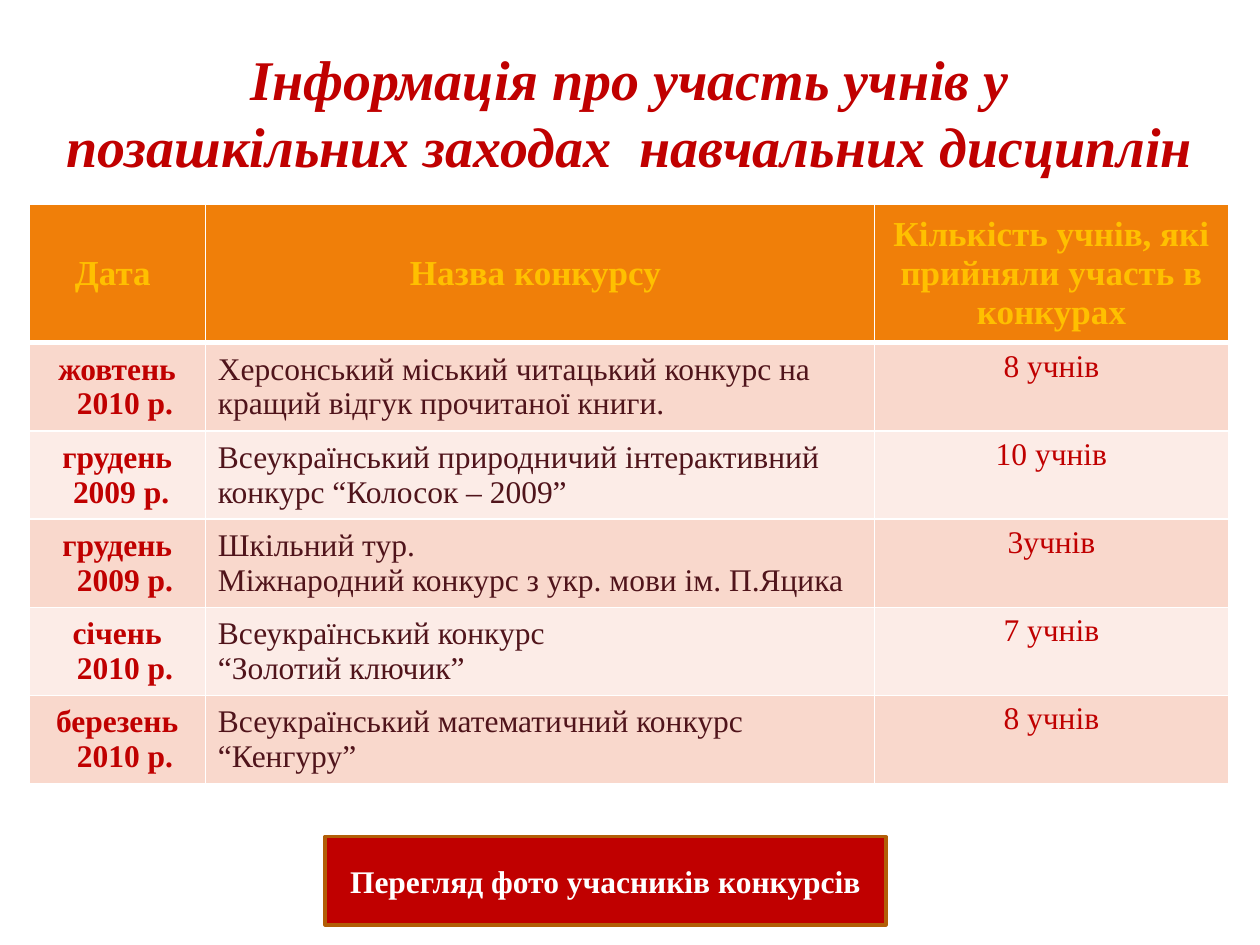
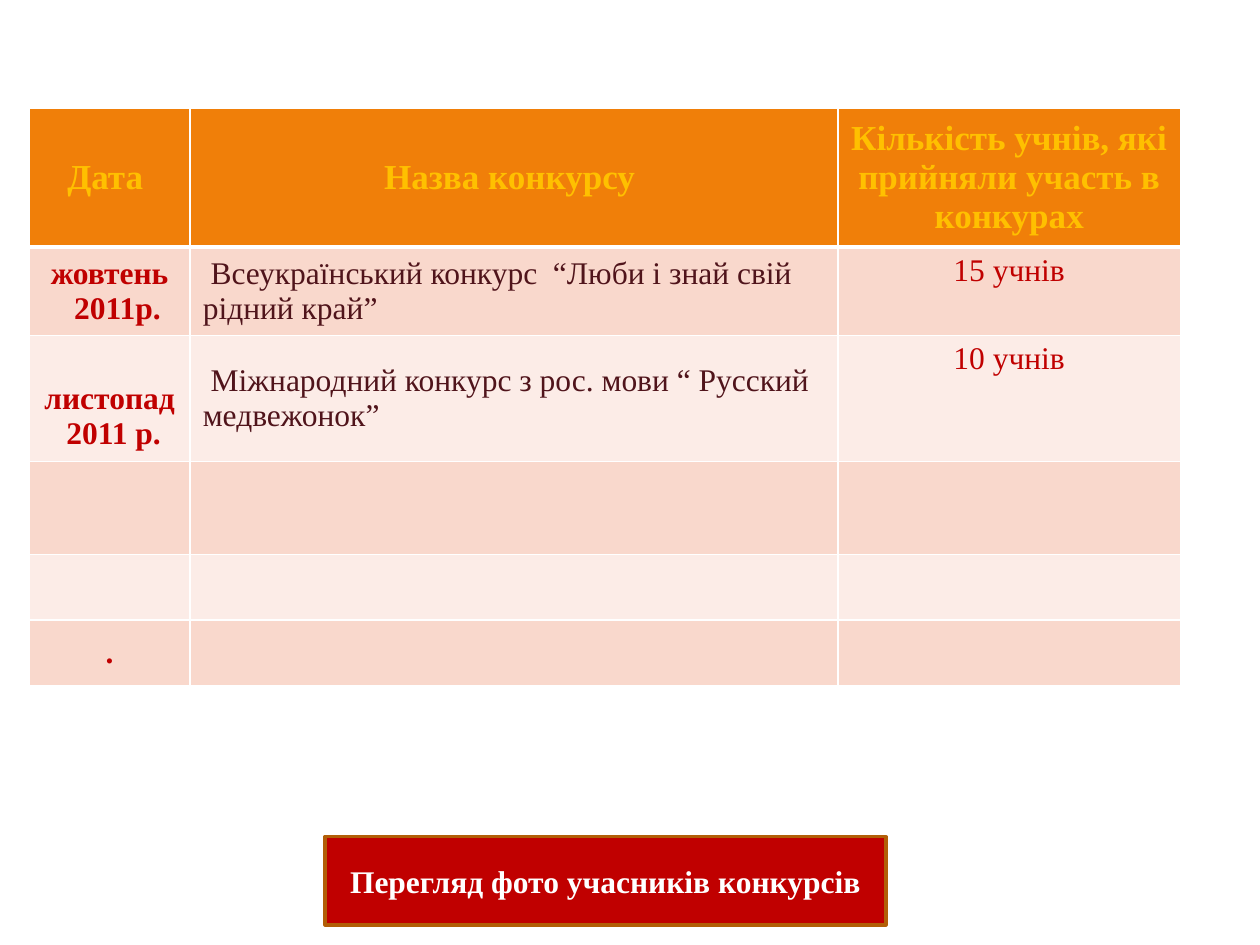
from dataclasses import dataclass

from lxml import etree
from pptx import Presentation, util as u
from pptx.dml.color import RGBColor
from pptx.enum import shapes, text
from pptx.oxml.ns import qn

UNIT = u.Inches(0.1)  # the slide is a grid of 100 columns and 75 rows
COLS, ROWS = 100, 75
MID, LEFT = text.PP_ALIGN.CENTER, text.PP_ALIGN.LEFT


@dataclass(frozen=True)
class Theme:
    font: str = "Times New Roman"
    red: str = "C00000"
    white: str = "FFFFFF"
    orange: str = "F07F09"
    gold: str = "FFC000"
    brown: str = "50141B"
    edge: str = "B25E07"
    bands: tuple[str, str] = ("F9D8CC", "FCECE7")
    title: float = 32
    head: float = 20
    body: float = 18
    thin: float = 1
    thick: float = 3


@dataclass(frozen=True)
class Box:
    x: float
    y: float
    w: float
    h: float

    def place(self) -> list[int]:
        return [grid(n) for n in (self.x, self.y, self.w, self.h)]


@dataclass(frozen=True)
class Style:
    size: float
    color: str
    bold: bool = False
    italic: bool = False
    align: text.PP_ALIGN = MID


@dataclass(frozen=True)
class Entry:
    date: str = ""
    name: str = ""
    count: str = ""
    high: float = 7
    drop: float = 0.5  # top margin of the date


@dataclass(frozen=True)
class Page:
    top: float
    widths: tuple[float, ...]
    entries: list[Entry]
    title: str = ""


T = Theme()
TITLE = Style(T.title, T.red, bold=True, italic=True)
HEAD = Style(T.head, T.gold, bold=True)
DATE = Style(T.body, T.red, bold=True)
NAME = Style(T.body, T.brown, align=LEFT)
COUNT = Style(T.body, T.red)
LABEL = Style(T.body, T.white, bold=True)

TITLE_BOX = Box(3.1, 4.7, 93.8, 10)
BUTTON_BOX = Box(25.8, 66.4, 44.5, 7)
BUTTON = "Перегляд фото учасників конкурсів"
TABLE_X, HEAD_H = 2.3, 11
HEADS = ("Дата ", "Назва конкурсу ",
         "Кількість учнів, які прийняли участь в конкурах")

PAGES = [
    Page(16.2, (14, 53.1, 28.1), [
        Entry("жовтень\n2010 р.", "Херсонський міський читацький конкурс на "
              "кращий відгук прочитаної книги.", "8 учнів"),
        Entry("грудень\n2009 р. ", "Всеукраїнський природничий інтерактивний "
              "конкурс “Колосок – 2009”", "10 учнів"),
        Entry("грудень\n2009 р.", "Шкільний тур.\n"
              "Міжнародний конкурс з укр. мови ім. П.Яцика", "3учнів"),
        Entry("січень\n2010 р.",
              "Всеукраїнський конкурс\n“Золотий ключик”", "7 учнів"),
        Entry("березень\n2010 р.",
              "Всеукраїнський математичний конкурс “Кенгуру”", "8 учнів"),
    ], "Інформація про участь учнів у\n"
       "позашкільних заходах  навчальних дисциплін"),
    Page(8.6, (12.8, 51.4, 27.2), [
        Entry("жовтень\n2011р.", " Всеукраїнський конкурс  “Люби і знай свій "
              "рідний край”", "15 учнів"),
        Entry("листопад\n2011 р. ", " Міжнародний конкурс з рос. мови "
              "“ Русский медвежонок”", "10 учнів", high=10, drop=3.3),
        Entry(high=7.4),
        Entry(high=5.2),
        Entry(".", high=5.2),
    ]),
]


def grid(n: float) -> int:
    return round(n * UNIT)


def rgb(code: str) -> RGBColor:
    return RGBColor.from_string(code)


def write(frame, words: str, style: Style) -> None:
    """Fill a text frame, one paragraph a line."""
    for i, line in enumerate(words.split("\n")):
        para = frame.add_paragraph() if i else frame.paragraphs[0]
        para.text = line
        para.alignment = style.align
        font = para.font
        font.name, font.size = T.font, u.Pt(style.size)
        font.bold, font.italic = style.bold, style.italic
        font.color.rgb = rgb(style.color)


def border(cell, top: float, bottom: float) -> None:
    """Draw white lines on the four sides of a cell."""
    props = cell._tc.get_or_add_tcPr()
    sides = {"L": T.thin, "R": T.thin, "T": top, "B": bottom}
    for side, width in sides.items():
        line = etree.SubElement(props, qn(f"a:ln{side}"), w=str(u.Pt(width)))
        fill = etree.SubElement(line, qn("a:solidFill"))
        etree.SubElement(fill, qn("a:srgbClr"), val=T.white)


def paint(cell, color: str, top: float, bottom: float) -> None:
    border(cell, top, bottom)
    cell.fill.solid()
    cell.fill.fore_color.rgb = rgb(color)
    cell.vertical_anchor = text.MSO_ANCHOR.MIDDLE


def add_title(slide, words: str) -> None:
    frame = slide.shapes.add_textbox(*TITLE_BOX.place()).text_frame
    frame.word_wrap = True
    frame.vertical_anchor = text.MSO_ANCHOR.BOTTOM
    write(frame, words, TITLE)


def add_grid(slide, page: Page) -> None:
    highs = [HEAD_H] + [e.high for e in page.entries]
    box = Box(TABLE_X, page.top, sum(page.widths), sum(highs))
    table = slide.shapes.add_table(
        len(highs), len(page.widths), *box.place()).table
    table.first_row = table.horz_banding = False
    for col, width in zip(table.columns, page.widths):
        col.width = grid(width)
    for row, high in zip(table.rows, highs):
        row.height = grid(high)

    # Header row
    for c, words in enumerate(HEADS):
        cell = table.cell(0, c)
        paint(cell, T.orange, T.thin, T.thick)
        write(cell.text_frame, words, HEAD)

    # Banded rows
    for r, entry in enumerate(page.entries, 1):
        parts = ((entry.date, DATE), (entry.name, NAME), (entry.count, COUNT))
        for c, (words, style) in enumerate(parts):
            cell = table.cell(r, c)
            paint(cell, T.bands[(r - 1) % 2],
                  T.thick if r == 1 else T.thin, T.thin)
            if words:
                write(cell.text_frame, words, style)
        cell.vertical_anchor = text.MSO_ANCHOR.TOP
        date = table.cell(r, 0)
        date.margin_top = grid(entry.drop)
        for para in date.text_frame.paragraphs[1:]:  # the year sits to the right
            para._p.get_or_add_pPr().set("marL", str(grid(1.25)))


def add_button(slide) -> None:
    shape = slide.shapes.add_shape(
        shapes.MSO_SHAPE.ACTION_BUTTON_CUSTOM, *BUTTON_BOX.place())
    shape.shadow.inherit = False
    shape.fill.solid()
    shape.fill.fore_color.rgb = rgb(T.red)
    shape.line.color.rgb = rgb(T.edge)
    shape.line.width = u.Pt(2)
    shape.text_frame.word_wrap = True
    shape.text_frame.vertical_anchor = text.MSO_ANCHOR.MIDDLE
    write(shape.text_frame, BUTTON, LABEL)


def main() -> None:
    deck = Presentation()
    deck.slide_width, deck.slide_height = grid(COLS), grid(ROWS)
    for page in PAGES:
        slide = deck.slides.add_slide(deck.slide_layouts[6])
        add_grid(slide, page)
        if page.title:
            add_title(slide, page.title)
        add_button(slide)
    deck.save("out.pptx")


if __name__ == "__main__":
    main()
